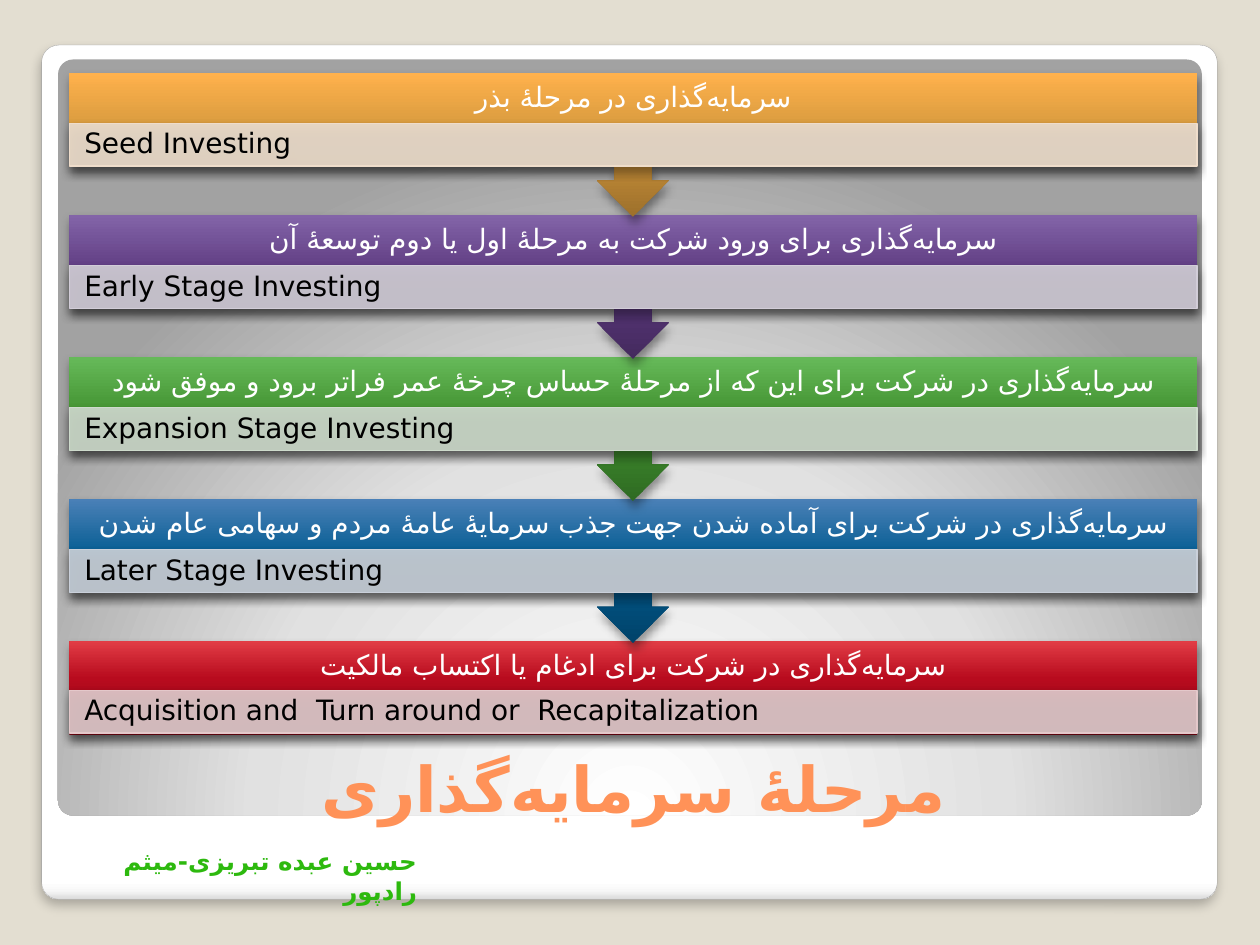
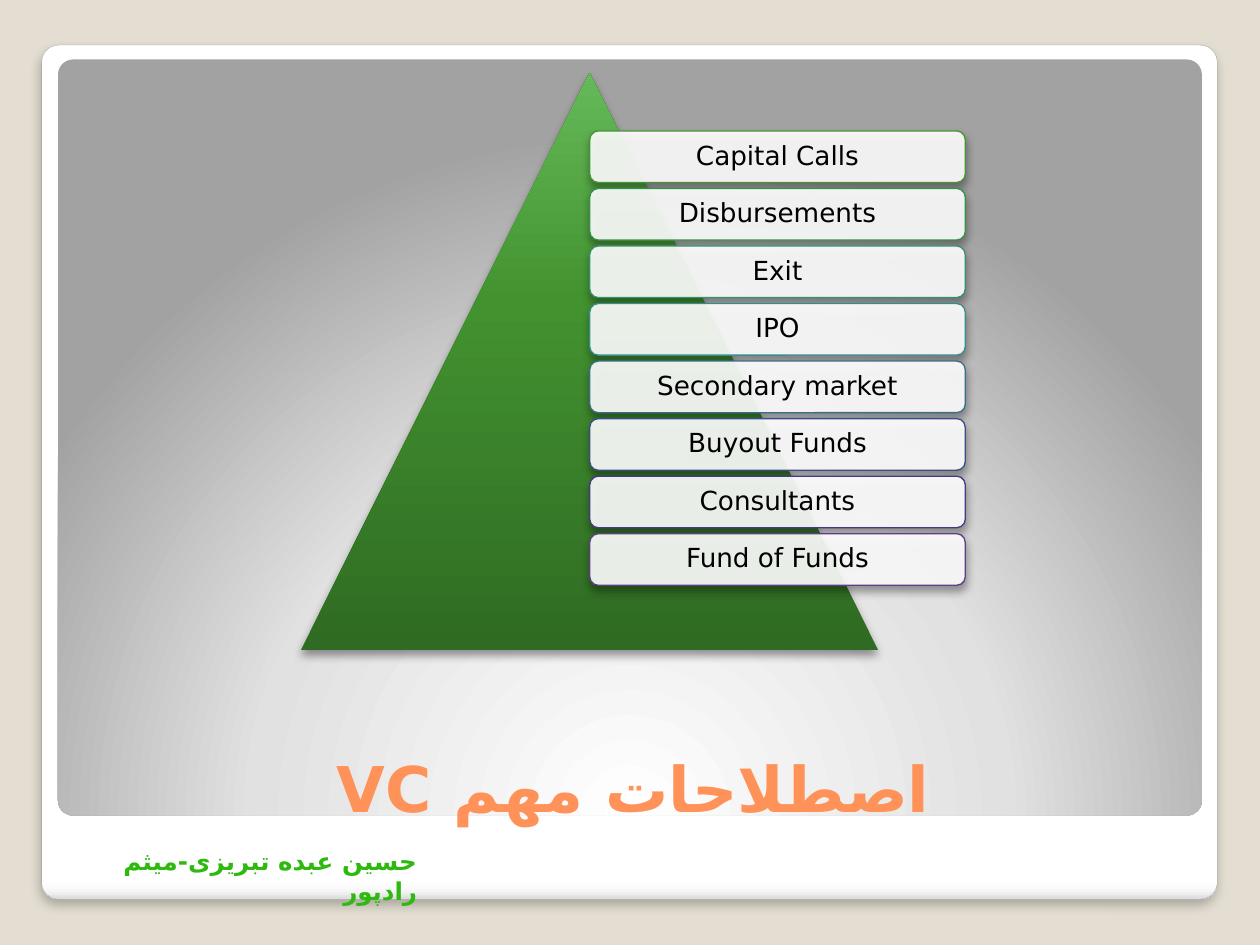
from lxml.etree import SubElement
from pptx import Presentation
from pptx.dml.color import RGBColor
from pptx.enum.shapes import MSO_SHAPE as SHAPE
from pptx.enum.text import MSO_ANCHOR as ANCHOR, MSO_AUTO_SIZE as AUTO, PP_ALIGN as ALIGN
from pptx.oxml.ns import qn
from pptx.util import Cm, Pt

RGB = RGBColor.from_string
FONT = "DejaVu Sans"
ZWNJ = chr(0x200C)      # Persian half-space, typed as | in the texts below

# Colours
WHITE, BLACK = RGB("FFFFFF"), RGB("000000")
BACKGROUND, TITLE, AUTHORS = RGB("E3DED1"), RGB("FF9258"), RGB("2DB90E")
FRAME_LINE = RGB("A4A4A4")
FRAME = [(0, WHITE), (98, WHITE), (99, RGB("F7F7F7")), (100, RGB("DADADA"))]
PANEL = [(0, WHITE), (55, RGB("E1E1E1")), (100, RGB("A2A2A2"))]
ORANGE = [(0, RGB("9D702B")), (60, RGB("D69A3E")), (100, RGB("FFB14C"))]
PURPLE = [(0, RGB("442A5E")), (60, RGB("5E3B81")), (100, RGB("8364A8"))]
GREEN = [(0, RGB("2F6B22")), (60, RGB("429230")), (100, RGB("66B959"))]
BLUE = [(0, RGB("00436A")), (60, RGB("035C91")), (100, RGB("4A80B7"))]
RED = [(0, RGB("870614")), (60, RGB("B80B1E")), (100, RGB("E13C45"))]
SOFT_SHADOW = (25, 6, 4)      # opacity %, blur pt, distance pt
DEEP_SHADOW = (40, 5.2, 3)


def paint(shape, fill, angle=270, centre=None, alpha=None, line=None, width=0.75,
          shadow=DEEP_SHADOW):
    """Fill with a colour or a list of gradient stops, then set line and shadow."""
    spPr = shape.element.spPr
    if isinstance(fill, list):
        shape.fill.gradient()
        grad = spPr.find(qn("a:gradFill"))
        stops, lin = grad.find(qn("a:gsLst")), grad.find(qn("a:lin"))
        stops.clear()
        for pos, color in fill:
            gs = SubElement(stops, qn("a:gs"), pos=str(pos * 1000))
            SubElement(gs, qn("a:srgbClr"), val=str(color))
        lin.set("ang", str(angle * 60000))
        if centre:
            grad.remove(lin)
            way = SubElement(grad, qn("a:path"), path="circle")
            SubElement(way, qn("a:fillToRect"),
                       **{side: str(v * 1000) for side, v in zip("ltrb", centre)})
    else:
        shape.fill.solid()
        shape.fill.fore_color.rgb = fill
        if alpha:
            color = spPr.find(qn("a:solidFill")).find(qn("a:srgbClr"))
            SubElement(color, qn("a:alpha"), val=str(alpha * 1000))
    if line:
        shape.line.color.rgb = line
        shape.line.width = Pt(width)
    else:
        shape.line.fill.background()
    shape.shadow.inherit = False
    if shadow:
        opacity, blur, dist = shadow
        outer = SubElement(spPr.find(qn("a:effectLst")), qn("a:outerShdw"),
                           blurRad=str(Pt(blur)), dist=str(Pt(dist)), dir="5400000",
                           algn="t", rotWithShape="0")
        color = SubElement(outer, qn("a:srgbClr"), val=str(BLACK))
        SubElement(color, qn("a:alpha"), val=str(opacity * 1000))


def write(shape, text, size=16, color=BLACK, bold=False, align=ALIGN.LEFT, rtl=False,
          anchor=ANCHOR.MIDDLE, margins=None, spacing=None, auto=AUTO.NONE):
    """Put one formatted paragraph in a shape; margins are left, top, right, bottom in cm."""
    tf = shape.text_frame
    tf.word_wrap, tf.auto_size, tf.vertical_anchor = True, auto, anchor
    if margins:
        tf.margin_left, tf.margin_top, tf.margin_right, tf.margin_bottom = map(Cm, margins)
    p = tf.paragraphs[0]
    p.alignment, p.line_spacing = align, spacing
    if rtl:
        p._p.get_or_add_pPr().set("rtl", "1")
    r = p.add_run()
    r.text = text.replace("|", ZWNJ)
    r.font.name, r.font.size, r.font.bold = FONT, Pt(size), bold
    r.font.color.rgb = color
    SubElement(r._r.get_or_add_rPr(), qn("a:cs"), typeface=FONT)


prs = Presentation()
prs.slide_width, prs.slide_height = Cm(25.4), Cm(19.05)
master = prs.slide_master
master.background.fill.solid()
master.background.fill.fore_color.rgb = BACKGROUND

# Slides with their titles
slides = []
for title in ("مرحلۀ سرمایه|گذاری", "اصطلاحات مهم VC"):
    s = prs.slides.add_slide(prs.slide_layouts[5])
    sp = s.shapes.title
    sp.left, sp.top, sp.width, sp.height = Cm(1.4), Cm(13.84), Cm(22.73), Cm(2.92)
    write(sp, title, size=36, color=TITLE, bold=True, align=ALIGN.CENTER, rtl=True,
          anchor=ANCHOR.BOTTOM)
    slides.append(s)
stages, terms = slides

# Frame, panel and authors, moved to the master so that all slides share them
frame = stages.shapes.add_shape(SHAPE.ROUNDED_RECTANGLE, Cm(0.84), Cm(0.91), Cm(23.7), Cm(17.22))
paint(frame, FRAME, angle=90, line=FRAME_LINE, width=0.16, shadow=SOFT_SHADOW)
panel = stages.shapes.add_shape(SHAPE.ROUNDED_RECTANGLE, Cm(1.17), Cm(1.2), Cm(23.06), Cm(15.24))
paint(panel, PANEL, centre=(50, 175, 50, -75), shadow=None)
frame.adjustments[0] = panel.adjustments[0] = 0.02
authors = stages.shapes.add_textbox(Cm(0.84), Cm(16.94), Cm(7.82), Cm(0.86))
write(authors, "حسین عبده تبریزی-میثم رادپور", size=14, color=AUTHORS, bold=True,
      align=ALIGN.RIGHT, rtl=True, anchor=ANCHOR.TOP, auto=AUTO.SHAPE_TO_FIT_TEXT)
for i, sp in enumerate((frame, panel, authors)):
    sp.element.nvSpPr.cNvPr.id = 20 + i
    master.shapes.element.insert(2 + i, sp.element)

# Slide 1: investment stages, each band pointing to the next
STAGES = [
    ("سرمایه|گذاری در مرحلۀ بذر", "Seed Investing",
     ORANGE, RGB("E9DDD1"), RGB("EFDDCB")),
    ("سرمایه|گذاری برای ورود شركت به مرحلۀ اول یا دوم توسعۀ آن", "Early Stage Investing",
     PURPLE, RGB("D2CFD6"), RGB("D2CDD8")),
    ("سرمایه|گذاری در شركت برای این كه از مرحلۀ حساس چرخۀ عمر فراتر برود و موفق شود",
     "Expansion Stage Investing", GREEN, RGB("D0D9CF"), RGB("CEDBCC")),
    ("سرمایه|گذاری در شركت برای آماده شدن جهت جذب سرمایۀ عامۀ مردم و سهامی عام| شدن",
     "Later Stage Investing", BLUE, RGB("CDD1D7"), RGB("CAD0DA")),
    ("سرمایه|گذاری در شركت برای ادغام یا اكتساب مالكیت",
     "Acquisition and  Turn around or  Recapitalization", RED, RGB("DFCDCE"), RGB("E4C8CA")),
]
LEFT, RIGHT, MIDDLE = 1.4, 24.13, 12.76
STEM, HEAD = 0.37, 0.72     # half widths of the arrow
PITCH = (12.93 - 1.47) / (len(STAGES) - 1)
for i, (persian, english, colors, tint, edge) in reversed(list(enumerate(STAGES))):
    last = i == len(STAGES) - 1
    top = 1.47 + PITCH * i
    base, neck, tip = top + 1.88, top + 2.17, top + 2.9
    points = [(RIGHT, top), (RIGHT, base)]
    if not last:
        points += [(MIDDLE + STEM, base), (MIDDLE + STEM, neck), (MIDDLE + HEAD, neck),
                   (MIDDLE, tip), (MIDDLE - HEAD, neck), (MIDDLE - STEM, neck),
                   (MIDDLE - STEM, base)]
    points.append((LEFT, base))
    outline = stages.shapes.build_freeform(Cm(LEFT), Cm(top))
    outline.add_line_segments([(Cm(x), Cm(y)) for x, y in points])
    band = outline.convert_to_shape()
    paint(band, colors)
    write(band, persian, color=WHITE, align=ALIGN.CENTER, rtl=True, spacing=0.9,
          margins=(0.3, 0.3, 0.3, 1.17 if last else 2.18))
    label = stages.shapes.add_shape(SHAPE.RECTANGLE, Cm(LEFT), Cm(top + (0.99 if last else 1.02)),
                                    Cm(RIGHT - LEFT), Cm(0.86))
    paint(label, tint, alpha=90, line=edge)
    write(label, english, spacing=0.9, margins=(0.3, 0.05, 0.3, 0.05))

# Slide 2: venture capital terms on a triangle
triangle = terms.shapes.add_shape(SHAPE.ISOSCELES_TRIANGLE, Cm(6.07), Cm(1.47), Cm(11.63), Cm(11.63))
paint(triangle, GREEN)
TERMS = [
    ("Capital Calls", RGB("439631")), ("Disbursements", RGB("339346")),
    ("Exit", RGB("35906B")), ("IPO", RGB("368E8C")),
    ("Secondary market", RGB("386E8B")), ("Buyout Funds", RGB("394E89")),
    ("Consultants", RGB("433A87")), ("Fund of Funds", RGB("603C84")),
]
for i, (term, edge) in enumerate(TERMS):
    box = terms.shapes.add_shape(SHAPE.ROUNDED_RECTANGLE, Cm(11.89), Cm(2.64 + 1.16 * i),
                                 Cm(7.57), Cm(1.04))
    paint(box, WHITE, alpha=90, line=edge)
    write(box, term, size=15, align=ALIGN.CENTER, spacing=0.9, margins=(0.2, 0.2, 0.2, 0.2))

prs.save("out.pptx")
